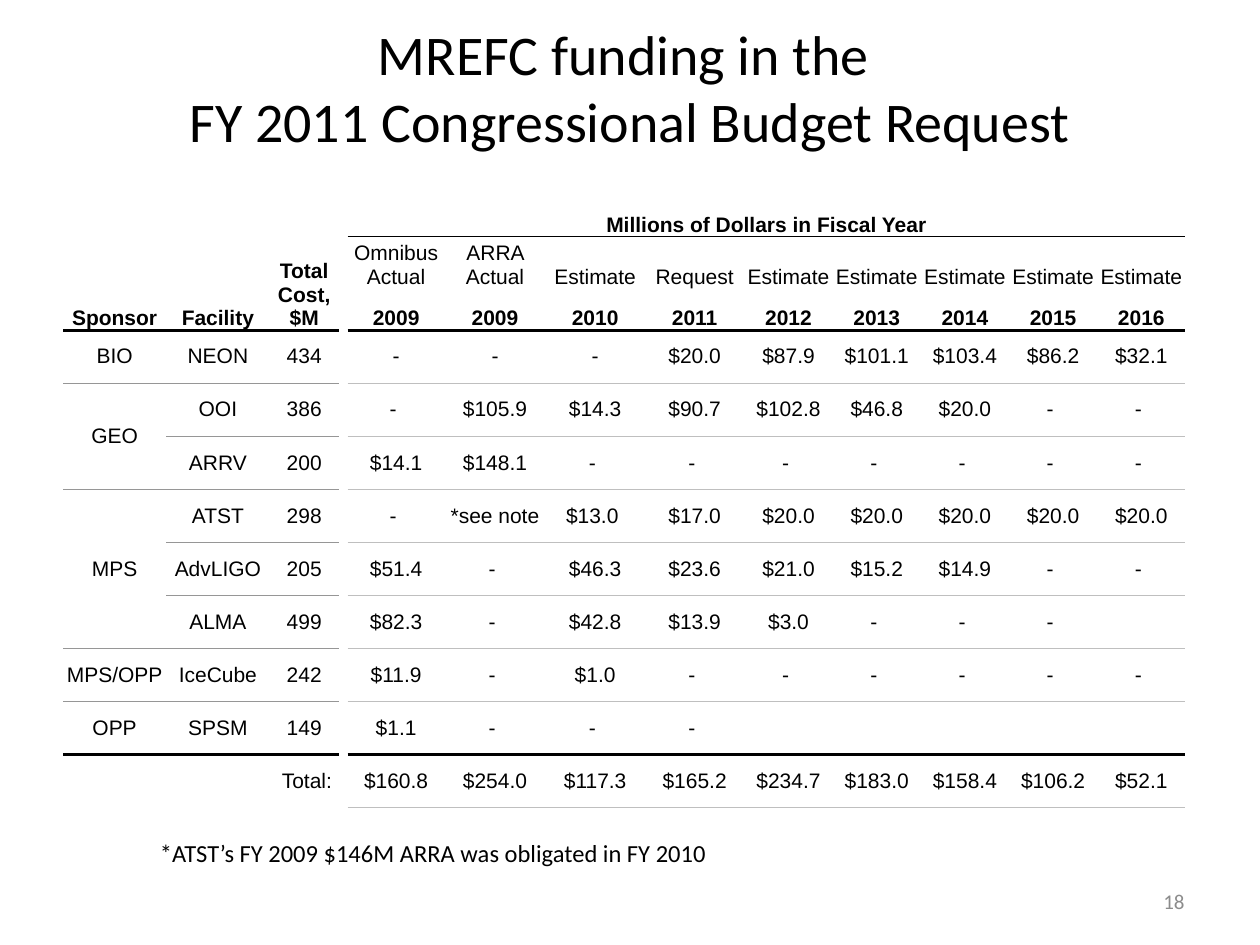
from lxml.etree import SubElement
from pptx import Presentation
from pptx.dml.color import RGBColor
from pptx.enum.text import MSO_ANCHOR as Anchor, PP_ALIGN as Align
from pptx.oxml.ns import qn
from pptx.util import Inches, Pt

COLOURS = {"black": "000000", "white": "FFFFFF", "page_number": "8C8C8C",
           "label_rule": "969696", "value_rule": "BFBFBF"}
HEAVY, THIN = 2, 0.5

NONE = "- "  # the trailing space moves the dash slightly left of centre
ROWS = [
    ["", "", "", "", "Millions of Dollars in Fiscal Year"] + [""] * 8,
    ["", "", "Total Cost, $M", "", "Omnibus Actual", "ARRA Actual", "Estimate", "Request"]
    + ["Estimate"] * 5,
    ["Sponsor", "Facility", "", "", "2009", "2009", "2010", "2011", "2012", "2013", "2014",
     "2015", "2016"],
    ["BIO", "NEON", "434", "", "-", "-", "-", "$20.0", "$87.9", "$101.1", "$103.4", "$86.2",
     "$32.1"],
    ["GEO", "OOI", "386", "", NONE, "$105.9", "$14.3", "$90.7", "$102.8", "$46.8", "$20.0",
     NONE, NONE],
    ["", "ARRV", "200", "", "$14.1", "$148.1"] + [NONE] * 7,
    ["MPS", "ATST", "298", "", NONE, "*see note", "$13.0 ", "$17.0"] + ["$20.0"] * 5,
    ["", "AdvLIGO", "205", "", "$51.4", NONE, "$46.3", "$23.6", "$21.0", "$15.2", "$14.9",
     NONE, NONE],
    ["", "ALMA", "499", "", "$82.3", NONE, "$42.8", "$13.9", "$3.0", NONE, NONE, NONE, ""],
    ["MPS/OPP", "IceCube", "242", "", "$11.9", NONE, "$1.0"] + [NONE] * 6,
    ["OPP", "SPSM", "149", "", "$1.1", NONE, NONE, NONE] + [""] * 5,
    ["", "", " Total:", "", "$160.8", "$254.0", "$117.3", "$165.2", "$234.7", "$183.0",
     "$158.4", "$106.2", "$52.1"],
]
MERGES = [(0, 4, 0, 12), (1, 2, 2, 2), (4, 0, 5, 0), (6, 0, 8, 0)]
HEADER_ROWS, GAP_COLUMN, LAST_EDGE = 3, 3, len(ROWS)
COLUMN_WIDTHS = [0.82, 0.82, 0.55, 0.07, 0.77, 0.8, 0.79, 0.79] + [0.7] * 5
HEADER_HEIGHTS = [0.3, 0.41, 0.33]
TABLE_HEIGHT = 4.83


def rule_at(edge, column):
    """Return (colour, width) of the rule above row number `edge`, or None."""
    if column == GAP_COLUMN:
        return None
    if edge in (HEADER_ROWS, LAST_EDGE - 1):
        return "black", HEAVY
    is_value = column > GAP_COLUMN
    if is_value and edge == 1:
        return "black", THIN
    if is_value and edge == LAST_EDGE:
        return "value_rule", THIN
    if HEADER_ROWS < edge < LAST_EDGE - 1:
        inside_merge = any(top < edge <= bottom and left <= column <= right
                           for top, left, bottom, right in MERGES)
        if not inside_merge:
            return "value_rule" if is_value else "label_rule", THIN
    return None


class SlideBuilder:
    """Holds the type style and the slide being filled."""
    text_font, table_font, table_size = "Calibri", "Arial", 12

    def __init__(self, slide):
        self.slide = slide

    def style(self, para, font, size, colour="black", bold=False, align=Align.CENTER):
        para.alignment = align
        for span in para.runs:
            span.font.name = font
            span.font.size = Pt(size)
            span.font.bold = bold
            span.font.color.rgb = RGBColor.from_string(COLOURS[colour])

    def text(self, text, left, top, width, height, size, align, colour="black",
             anchor=Anchor.MIDDLE):
        box = self.slide.shapes.add_textbox(*map(Inches, (left, top, width, height)))
        frame = box.text_frame
        frame.word_wrap = True
        frame.vertical_anchor = anchor
        frame.text = text
        self.style(frame.paragraphs[0], self.text_font, size, colour, align=align)

    def border(self, cell, side, rule):
        line = SubElement(cell._tc.get_or_add_tcPr(), qn(f"a:ln{side}"))
        if rule is None:
            SubElement(line, qn("a:noFill"))
            return
        colour, width = rule
        line.set("w", str(Pt(width)))
        fill = SubElement(line, qn("a:solidFill"))
        SubElement(fill, qn("a:srgbClr"), val=COLOURS[colour])

    def cell(self, cell, row, column, text):
        cell.margin_left = cell.margin_right = cell.margin_top = cell.margin_bottom = 0
        cell.vertical_anchor = Anchor.BOTTOM if row < HEADER_ROWS else Anchor.MIDDLE
        cell.text = text
        para = cell.text_frame.paragraphs[0]
        bold = row in (0, 2) or (row == 1 and column < GAP_COLUMN)
        self.style(para, self.table_font, self.table_size, bold=bold)
        if not text:
            SubElement(para._p, qn("a:endParaRPr"), sz=str(self.table_size * 100))

        height = cell.span_height if cell.is_merge_origin else 1
        self.border(cell, "L", None)
        self.border(cell, "R", None)
        self.border(cell, "T", rule_at(row, column))
        self.border(cell, "B", rule_at(row + height, column))
        if row == 0 or column <= GAP_COLUMN:
            cell.fill.solid()
            cell.fill.fore_color.rgb = RGBColor.from_string(COLOURS["white"])
        else:
            cell.fill.background()

    def table(self, left, top):
        frame = self.slide.shapes.add_table(
            len(ROWS), len(COLUMN_WIDTHS), Inches(left), Inches(top),
            Inches(sum(COLUMN_WIDTHS)), Inches(TABLE_HEIGHT))
        table = frame.table
        table.first_row = table.horz_banding = False
        for column, width in zip(table.columns, COLUMN_WIDTHS):
            column.width = Inches(width)
        body_count = len(ROWS) - HEADER_ROWS
        body_height = (TABLE_HEIGHT - sum(HEADER_HEIGHTS)) / body_count
        for row, height in zip(table.rows, HEADER_HEIGHTS + [body_height] * body_count):
            row.height = Inches(height)
        for first_row, first_column, last_row, last_column in MERGES:
            table.cell(first_row, first_column).merge(table.cell(last_row, last_column))
        for row, texts in enumerate(ROWS):
            for column, text in enumerate(texts):
                self.cell(table.cell(row, column), row, column, text)


def main():
    deck = Presentation()
    deck.slide_width, deck.slide_height = Inches(10), Inches(7.5)
    page = SlideBuilder(deck.slides.add_slide(deck.slide_layouts[6]))
    page.text("MREFC funding in the \vFY 2011 Congressional Budget Request",
              0.5, 0.3, 9, 0.78, 32, Align.CENTER)
    page.text("18", 7.17, 6.95, 2.33, 0.4, 12, Align.RIGHT, "page_number")
    page.table(0.5, 1.58)
    page.text("*ATST’s FY 2009 $146M ARRA was obligated in FY 2010",
              1.17, 6.6, 5.92, 0.34, 14, Align.LEFT, anchor=Anchor.TOP)
    deck.save("out.pptx")


if __name__ == "__main__":
    main()
